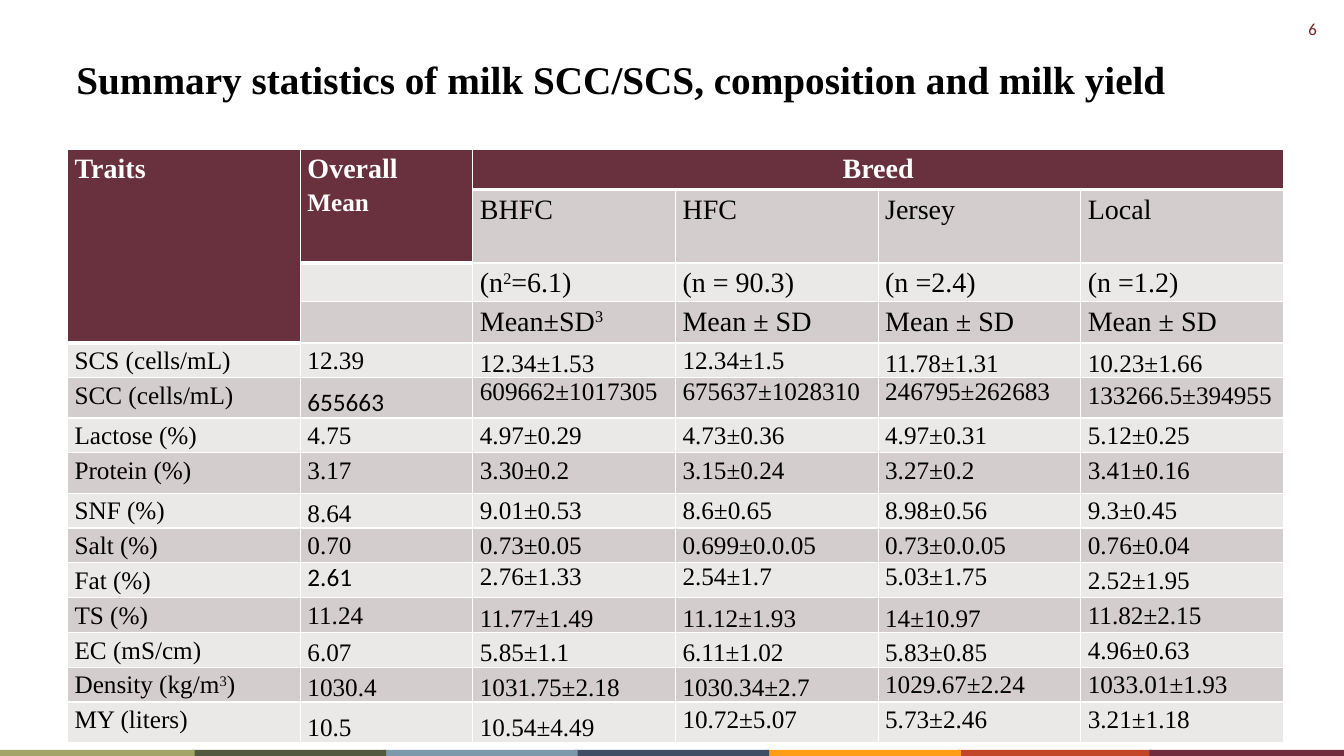
from dataclasses import dataclass

from lxml.etree import SubElement
from pptx import Presentation
from pptx.dml.color import RGBColor as RGB
from pptx.enum.shapes import MSO_SHAPE as Shape
from pptx.enum.text import MSO_ANCHOR as Anchor, PP_ALIGN as Align
from pptx.oxml.ns import qn
from pptx.util import Inches, Pt


@dataclass(frozen=True)
class Theme:
    """Colours, fonts and type sizes of the slide."""
    header: str = "69303D"
    light_band: str = "EBE8E8"
    dark_band: str = "D4CDCE"
    white: str = "FFFFFF"
    black: str = "000000"
    page_number: str = "762123"
    serif: str = "Times New Roman"
    sans: str = "Calibri"
    title_size: int = 28
    heading_size: int = 20
    body_size: int = 18
    number_size: int = 12


THEME = Theme()
STRIP = {5: "C34628", 6: "712C3D", 4: "FF9E16", 3: "404E65",
         2: "7C98AB", 1: "53593E", 0: "A3A467"}

HEADINGS = [
    ["Traits", "Overall\nMean", "Breed", "", "", ""],
    ["", "", "BHFC", "HFC", "Jersey", "Local"],
    ["", "", "(n^2^=6.1)", "(n = 90.3)", "(n =2.4)", "(n =1.2)"],
    ["", "", "Mean±SD^3^", "Mean ± SD", "Mean ± SD", "Mean ± SD"],
]
TRAITS = [
    ["SCS (cells/mL)", "12.39", "12.34±1.53", "12.34±1.5", "11.78±1.31", "10.23±1.66"],
    ["SCC (cells/mL)", "655663", "609662±1017305", "675637±1028310", "246795±262683",
     "133266.5±394955"],
    ["Lactose (%)", "4.75", "4.97±0.29", "4.73±0.36", "4.97±0.31", "5.12±0.25"],
    ["Protein (%)", "3.17", "3.30±0.2", "3.15±0.24", "3.27±0.2", "3.41±0.16"],
    ["SNF (%)", "8.64", "9.01±0.53", "8.6±0.65", "8.98±0.56", "9.3±0.45"],
    ["Salt (%)", "0.70", "0.73±0.05", "0.699±0.0.05", "0.73±0.0.05", "0.76±0.04"],
    ["Fat (%)", "2.61", "2.76±1.33", "2.54±1.7", "5.03±1.75", "2.52±1.95"],
    ["TS (%)", "11.24", "11.77±1.49", "11.12±1.93", "14±10.97", "11.82±2.15"],
    ["EC (mS/cm)", "6.07", "5.85±1.1", "6.11±1.02", "5.83±0.85", "4.96±0.63"],
    ["Density (kg/m^3^)", "1030.4", "1031.75±2.18", "1030.34±2.7", "1029.67±2.24",
     "1033.01±1.93"],
    ["MY (liters)", "10.5", "10.54±4.49", "10.72±5.07", "5.73±2.46", "3.21±1.18"],
]
COLUMN_WIDTHS = [2.31, 1.71] + [2.01] * 4
TALL_TRAITS = {"SCC (cells/mL)", "Protein (%)", "MY (liters)"}
ROW_HEIGHTS = [0.4, 0.67, 0.35, 0.41] + [
    0.4 if values[0] in TALL_TRAITS else 0.32 for values in TRAITS]
HEADER_SPANS = {(0, 0): (3, 0), (0, 1): (1, 1), (0, 2): (0, 5)}
BOTTOM_COLUMNS = {4: {2, 4, 5}, 5: {1}, 8: {1}, 11: {2, 3, 4},
                  12: {1, 2, 3, 4}, 13: {1, 2, 3}, 14: {1, 2}}
SINGLE_SPACED = {(row, column) for row in (5, 10) for column in range(1, 5)}
SANS_CELLS = {(5, 1), (10, 1)}


def style_font(font, size, color, face=THEME.serif, bold=False):
    """Set the size, colour, face and weight of a font."""
    font.size, font.name, font.bold = Pt(size), face, bold
    font.color.rgb = RGB.from_string(color)


def add_label(slide, text, box, size, color, face, bold=False, align=Align.LEFT):
    """Add one line of text in a box given in inches."""
    frame = slide.shapes.add_textbox(*map(Inches, box)).text_frame
    frame.word_wrap = True
    frame.text = text
    line = frame.paragraphs[0]
    line.alignment = align
    style_font(line.runs[0].font, size, color, face, bold)


def add_strip(slide):
    """Draw the coloured strip along the bottom edge."""
    for slot, color in STRIP.items():
        bar = slide.shapes.add_shape(Shape.RECTANGLE, Inches(1.9 * slot), Inches(7.44),
                                     Inches(1.93), Inches(0.06))
        bar.shadow.inherit = False
        bar.fill.solid()
        bar.fill.fore_color.rgb = RGB.from_string(color)
        bar.line.fill.background()


def set_borders(cell, bottom):
    """Give a cell white borders, with its own bottom width in points."""
    properties = cell._tc.get_or_add_tcPr()
    for index, (side, width) in enumerate(
            {"lnL": 1, "lnR": 1, "lnT": 1, "lnB": bottom}.items()):
        line = SubElement(properties, qn(f"a:{side}"), w=str(Pt(width)))
        fill = SubElement(line, qn("a:solidFill"))
        SubElement(fill, qn("a:srgbClr"), val=THEME.white)
        properties.insert(index, line)


def fill_paragraph(paragraph, text, size, color, face, bold):
    """Write text whose parts between carets are superscript."""
    for index, part in enumerate(text.split("^")):
        run = paragraph.add_run()
        run.text = part
        style_font(run.font, size, color, face, bold)
        if index % 2:
            run._r.get_or_add_rPr().set("baseline", "30000")


def fill_cell(cell, text, row, column):
    """Write and format one cell of the statistics table."""
    is_header = (row, column) in HEADER_SPANS
    band = THEME.dark_band if row % 2 else THEME.light_band
    cell.fill.solid()
    cell.fill.fore_color.rgb = RGB.from_string(
        THEME.header if is_header or cell.is_spanned else band)
    cell.margin_left = cell.margin_right = Inches(0.07)
    cell.margin_top = cell.margin_bottom = 0
    if cell.is_spanned:
        return
    set_borders(cell, 3 if is_header else 1)
    if column in BOTTOM_COLUMNS.get(row, ()):
        cell.vertical_anchor = Anchor.BOTTOM
    if not text:
        return
    color = THEME.white if is_header else THEME.black
    face = THEME.sans if (row, column) in SANS_CELLS else THEME.serif
    for index, line in enumerate(text.split("\n")):
        paragraph = cell.text_frame.add_paragraph() if index else cell.text_frame.paragraphs[0]
        if (row, column) not in SINGLE_SPACED:
            paragraph.line_spacing = 1.15
            paragraph.alignment = Align.CENTER if text == "Breed" else Align.JUSTIFY
        is_heading = row < len(HEADINGS) and not index
        size = THEME.heading_size if is_heading else THEME.body_size
        fill_paragraph(paragraph, line, size, color, face, is_header)


def add_statistics(slide):
    """Add the table of trait statistics by breed."""
    rows = HEADINGS + TRAITS
    table = slide.shapes.add_table(
        len(rows), len(COLUMN_WIDTHS), Inches(0.67), Inches(1.48),
        Inches(sum(COLUMN_WIDTHS)), Inches(sum(ROW_HEIGHTS))).table
    for column, width in zip(table.columns, COLUMN_WIDTHS):
        column.width = Inches(width)
    for row, height in zip(table.rows, ROW_HEIGHTS):
        row.height = Inches(height)
    for start, end in HEADER_SPANS.items():
        table.cell(*start).merge(table.cell(*end))
    for row, values in enumerate(rows):
        for column, text in enumerate(values):
            fill_cell(table.cell(row, column), text, row, column)


def main():
    """Build and save the slide."""
    deck = Presentation()
    deck.slide_width, deck.slide_height = Inches(13.33), Inches(7.5)
    slide = deck.slides.add_slide(deck.slide_layouts[6])
    add_label(slide, "6", (12.46, 0.14, 0.7, 0.3), THEME.number_size,
              THEME.page_number, THEME.sans, align=Align.RIGHT)
    add_strip(slide)
    add_label(slide, "Summary statistics of milk SCC/SCS, composition and milk yield",
              (0.66, 0.5, 12, 0.74), THEME.title_size, THEME.black, THEME.serif, bold=True)
    add_statistics(slide)
    deck.save("out.pptx")


if __name__ == "__main__":
    main()
